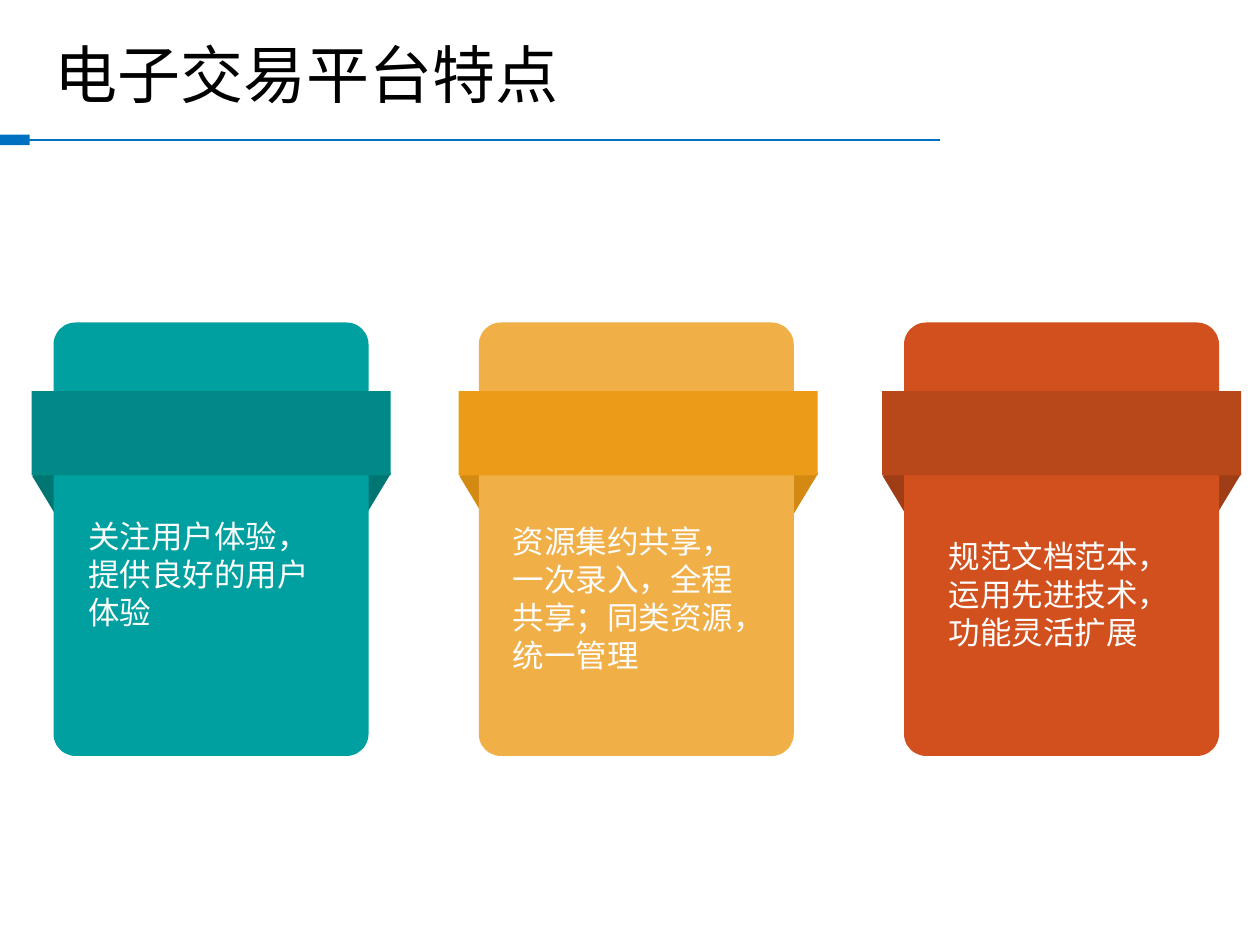
from dataclasses import dataclass

from lxml.etree import SubElement
from pptx import Presentation
from pptx.dml.color import RGBColor
from pptx.enum.shapes import MSO_CONNECTOR, MSO_SHAPE
from pptx.enum.text import MSO_ANCHOR, MSO_AUTO_SIZE
from pptx.oxml.ns import qn
from pptx.util import Pt


@dataclass(frozen=True)
class Theme:
    blue: str = "0070C0"
    ink: str = "000000"
    light: str = "FDFDFD"
    head: str = "Noto Sans CJK SC"
    body: str = "Noto Sans CJK JP"
    head_size: float = 36
    body_size: float = 18
    lead: float = 21.8


THEME = Theme()

# Card, band and flap colours; band shift; text box relative to the card; text
CARDS = [
    ("00A0A0", "008986", "007673", -12.6, (12.6, 107.3, 154.8, 72.7),
     "关注用户体验，提供良好的用户体验"),
    ("F0AF47", "EC9B18", "D48A12", -11.5, (12.3, 110.2, 155.5, 94.3),
     "资源集约共享，一次录入，全程共享；同类资源，统一管理"),
    ("D2501E", "B8471A", "9E3D16", -12.6, (18.4, 118.8, 141.8, 72.7),
     "规范文档范本，运用先进技术，功能灵活扩展"),
]


def add_block(slide, kind, box, color, turn=0):
    shape = slide.shapes.add_shape(kind, *map(Pt, box))
    shape.shadow.inherit = False
    shape.fill.solid()
    shape.fill.fore_color.rgb = RGBColor.from_string(color)
    shape.line.fill.background()
    shape.rotation = turn
    return shape


def add_text(slide, box, text, face, size, color):
    """Add a wrapped text box, with the face set for East Asian text too."""
    frame = slide.shapes.add_textbox(*map(Pt, box)).text_frame
    frame.word_wrap = True
    para = frame.paragraphs[0]
    para.text = text
    font = para.font
    font.size = Pt(size)
    font.color.rgb = RGBColor.from_string(color)
    font.name = face
    props = para._p.get_or_add_pPr().find(qn("a:defRPr"))
    SubElement(props, qn("a:ea"), typeface=face)
    return frame


def add_header(slide, left, top, width, height):
    rule = slide.shapes.add_connector(
        MSO_CONNECTOR.STRAIGHT,
        Pt(left + 14.4), Pt(top + 80), Pt(left + 537), Pt(top + 80))
    rule.line.color.rgb = RGBColor.from_string(THEME.blue)
    rule.line.width = Pt(0.9)
    SubElement(rule._element.spPr, qn("a:effectLst"))
    add_block(slide, MSO_SHAPE.RECTANGLE, (left, top + 77, 17, 6), THEME.blue)
    frame = add_text(slide, (left + 23.8, top, width, height),
                     "电子交易平台特点", THEME.head, THEME.head_size, THEME.ink)
    frame.vertical_anchor = MSO_ANCHOR.MIDDLE


def add_card(slide, left, top, width, height, card):
    """Draw a card with a band around it, folded behind at both sides."""
    fill, band, flap, shift, (dx, dy, wide, high), text = card
    edge = left + shift
    for x, y, turn in ((157, 72.7, 31.1), (15.1, 74.2, -31.1)):
        add_block(slide, MSO_SHAPE.RECTANGLE,
                  (edge + x, top + y, 33.8, 66.2), flap, turn)
    body = add_block(slide, MSO_SHAPE.ROUNDED_RECTANGLE,
                     (left, top, width, height), fill)
    body.adjustments[0] = 0.07
    add_block(slide, MSO_SHAPE.RECTANGLE, (edge, top + 39.2, 205.2, 48.2), band)
    frame = add_text(slide, (left + dx, top + dy, wide, high),
                     text, THEME.body, THEME.body_size, THEME.light)
    frame.auto_size = MSO_AUTO_SIZE.SHAPE_TO_FIT_TEXT
    frame.paragraphs[0].line_spacing = Pt(THEME.lead)


def main():
    deck = Presentation()
    deck.slide_width, deck.slide_height = Pt(720), Pt(540)
    slide = deck.slides.add_slide(deck.slide_layouts[6])
    add_header(slide, 0, 0, 620.6, 84.2)
    for i, card in enumerate(CARDS):
        add_card(slide, 30.6 + 243 * i, 184.3, 180, 247.7, card)
    deck.save("out.pptx")


if __name__ == "__main__":
    main()
